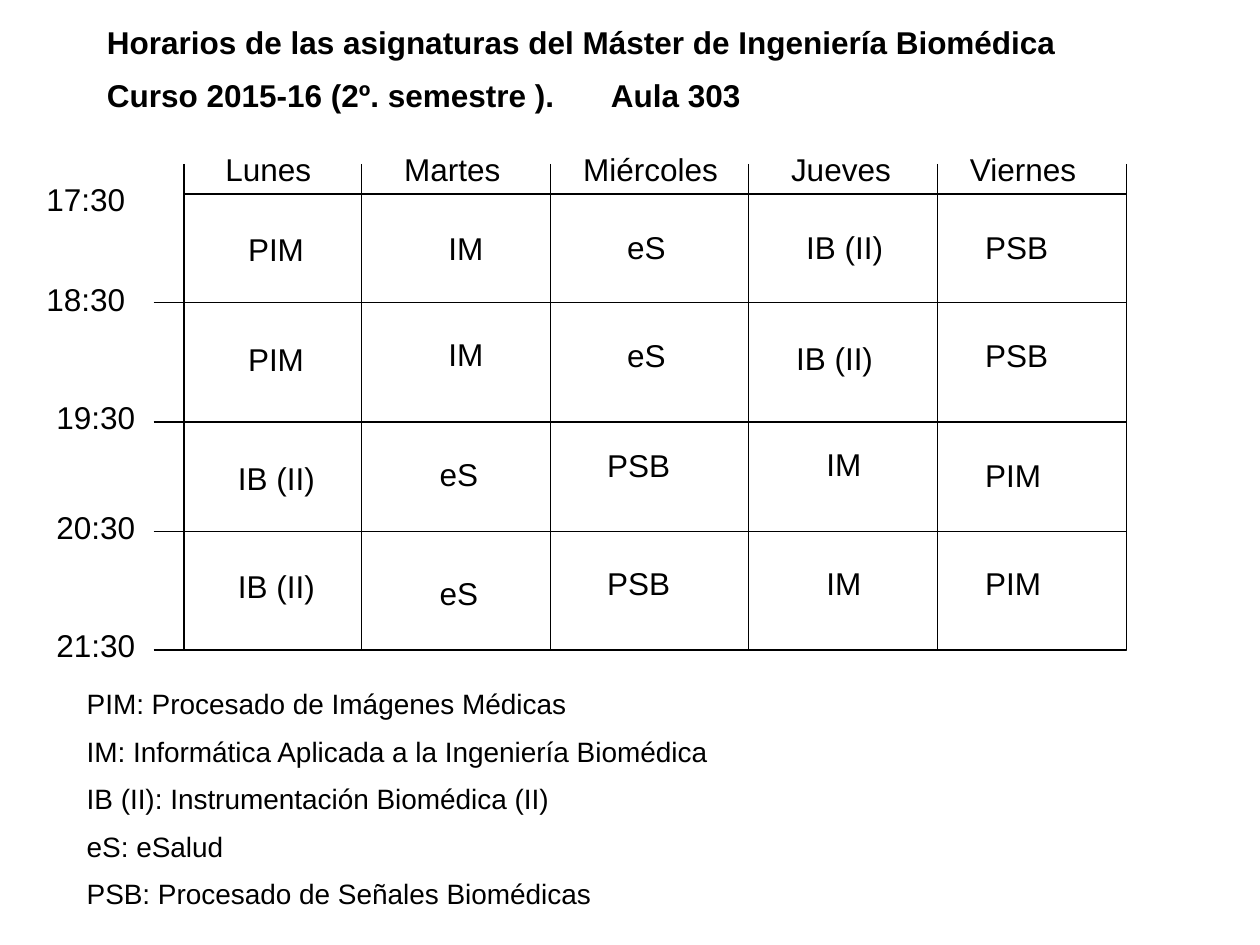
"""Build the weekly class timetable slide of a biomedical engineering master."""
from dataclasses import dataclass

from lxml.etree import SubElement
from pptx import Presentation
from pptx.dml.color import RGBColor
from pptx.enum.shapes import MSO_CONNECTOR, MSO_SHAPE
from pptx.enum.text import MSO_AUTO_SIZE
from pptx.oxml.ns import qn
from pptx.util import Inches, Pt


@dataclass(frozen=True)
class Theme:
    font: str = "Arial"
    ink: RGBColor = RGBColor(0, 0, 0)
    body: Pt = Pt(18)
    legend: Pt = Pt(16)
    rule: Pt = Pt(0.75)


theme = Theme()
presentation = Presentation()
presentation.slide_width, presentation.slide_height = Inches(10), Inches(7.5)
slide = presentation.slides.add_slide(presentation.slide_layouts[6])


def add_text(lines, left, top, width, height=0.4, size=theme.body, bold=None):
    shape = slide.shapes.add_textbox(*map(Inches, (left, top, width, height)))
    frame = shape.text_frame
    frame.word_wrap = True
    frame.auto_size = MSO_AUTO_SIZE.SHAPE_TO_FIT_TEXT
    for index, line in enumerate(lines):
        paragraph = frame.add_paragraph() if index else frame.paragraphs[0]
        spacing = SubElement(paragraph._p.get_or_add_pPr(), qn("a:spcBef"))
        SubElement(spacing, qn("a:spcPct")).set("val", "50000")
        run = paragraph.add_run()
        run.text = line
        run.font.name, run.font.size, run.font.bold = theme.font, size, bold
        run.font.color.rgb = theme.ink


def add_rule(*ends):
    connector = slide.shapes.add_connector(MSO_CONNECTOR.STRAIGHT, *map(Inches, ends))
    connector.line.color.rgb = theme.ink
    connector.line.width = theme.rule
    SubElement(connector._element.spPr, qn("a:effectLst"))
    return connector


column_edges = [1.46, 2.87, 4.37, 5.94, 7.44, 8.94]
row_edges = [1.54, 2.4, 3.35, 4.22, 5.16]
grid_left, grid_right = column_edges[0], column_edges[-1]
grid_top, grid_bottom = row_edges[0], row_edges[-1]
header_top, tick_left, outer_tick_bottom = 1.3, 1.22, 1.62

add_text(
    [
        "PIM: Procesado de Imágenes Médicas",
        "IM: Informática Aplicada a la Ingeniería Biomédica",
        "IB (II): Instrumentación Biomédica (II)",
        "eS: eSalud",
        "PSB: Procesado de Señales Biomédicas",
    ],
    0.59, 5.4, 8.27, 1.97, theme.legend,
)
add_text(
    [
        "Horarios de las asignaturas del Máster de Ingeniería Biomédica",
        "Curso 2015-16 (2º. semestre ). \tAula 303",
    ],
    0.75, 0.13, 8.98, 0.85, bold=True,
)

grid = slide.shapes.add_shape(
    MSO_SHAPE.RECTANGLE, Inches(grid_left), Inches(grid_top),
    Inches(grid_right - grid_left), Inches(grid_bottom - grid_top),
)
grid.shadow.inherit = False
grid.fill.background()
grid.line.color.rgb = theme.ink
grid.line.width = theme.rule

for edge in column_edges:
    is_outer = edge in (grid_left, grid_right)
    add_rule(edge, header_top, edge, outer_tick_bottom if is_outer else grid_bottom)

for edge in row_edges[1:]:
    row_rule = add_rule(tick_left, edge, grid_right, edge)
    if edge == row_edges[2]:
        row_rule.end_connect(grid, 3)
add_rule(2.72, grid_top, 2.95, grid_top)

hours = ["17:30", "18:30", "19:30", "20:30", "21:30"]
hour_lefts = [0.27, 0.27, 0.35, 0.35, 0.35]
hour_rises = [0.16, 0.23, 0.24, 0.24, 0.24]
for hour, left, edge, rise in zip(hours, hour_lefts, row_edges, hour_rises):
    add_text([hour], left, edge - rise, 0.87)

subject_widths = {"PIM": 0.79, "IM": 0.55, "IB (II)": 0.94, "eS": 0.63, "PSB": 0.87}
days = [
    ("Lunes", 0.23, 0.94,
     [("PIM", 0.41, 0.24), ("PIM", 0.41, 0.25), ("IB (II)", 0.33, 0.24), ("IB (II)", 0.33, 0.23)]),
    ("Martes", 0.24, 1.1,
     [("IM", 0.59, 0.23), ("IM", 0.59, 0.21), ("eS", 0.52, 0.21), ("eS", 0.52, 0.29)]),
    ("Miércoles", 0.16, 1.34,
     [("eS", 0.51, 0.22), ("eS", 0.51, 0.22), ("PSB", 0.35, 0.14), ("PSB", 0.35, 0.21)]),
    ("Jueves", 0.24, 1.1,
     [("IB (II)", 0.36, 0.22), ("IB (II)", 0.28, 0.24), ("IM", 0.52, 0.13), ("IM", 0.52, 0.21)]),
    ("Viernes", 0.16, 1.1,
     [("PSB", 0.28, 0.22), ("PSB", 0.28, 0.22), ("PIM", 0.28, 0.22), ("PIM", 0.28, 0.21)]),
]
for column, (day, day_indent, day_width, classes) in zip(column_edges, days):
    add_text([day], column + day_indent, 1.14, day_width)
    for row, (subject, indent, drop) in zip(row_edges, classes):
        add_text([subject], column + indent, row + drop, subject_widths[subject])

presentation.save("out.pptx")
